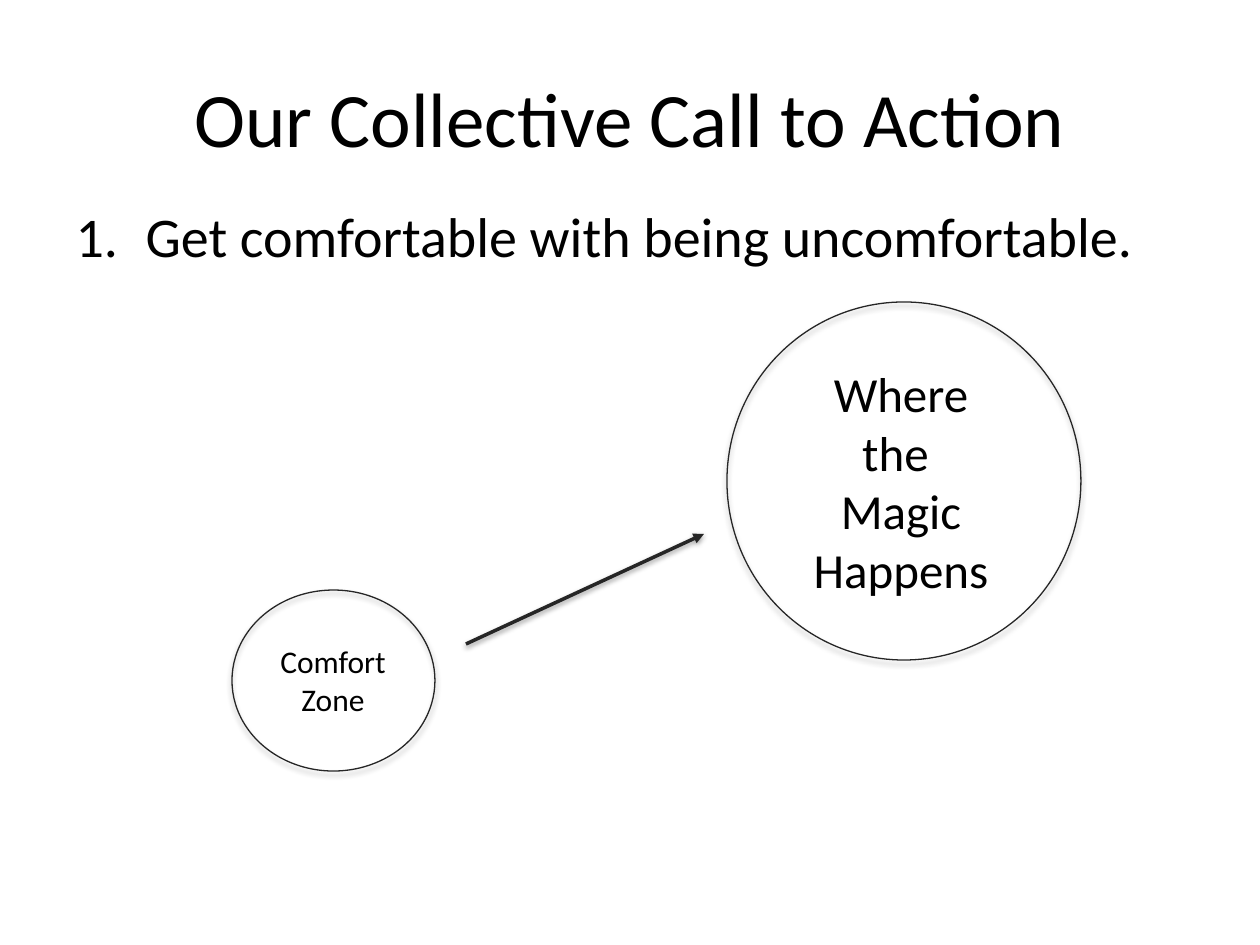
from dataclasses import dataclass

from pptx import Presentation
from pptx import util as u
from pptx.dml.color import RGBColor
from pptx.enum import shapes, text
from pptx.oxml import ns, xmlchemy

EMU_PER_INCH = 914400
PX_PER_INCH = 126


@dataclass(frozen=True)
class Theme:
    """Hold the colours, font and type sizes of the slide."""
    font: str = "Calibri"
    ink: str = "000000"
    outline: str = "262626"
    title: int = 44
    body: int = 32
    large: int = 28
    small: int = 18


THEME = Theme()


def px(length):
    """Turn pixels into EMU."""
    return u.Emu(round(length * EMU_PER_INCH / PX_PER_INCH))


def place(shape, *frame):
    """Move and size a shape by left, top, width and height."""
    shape.left, shape.top, shape.width, shape.height = map(px, frame)


def add_child(parent, tag, **attributes):
    """Append an XML element and return it."""
    child = xmlchemy.OxmlElement(tag)
    for name, value in attributes.items():
        child.set(name, str(value))
    parent.append(child)
    return child


def format_text(paragraphs, size, align):
    """Give paragraphs their font, size, colour and alignment."""
    for para in paragraphs:
        para.alignment = align
        for span in para.runs:
            span.font.name = THEME.font
            span.font.size = u.Pt(size)
            span.font.color.rgb = RGBColor.from_string(THEME.ink)


def add_shadow(shape, alpha, distance):
    """Cast a soft shadow straight down."""
    properties = shape._element.spPr
    for effects in properties.findall(ns.qn("a:effectLst")):
        properties.remove(effects)
    effects = add_child(properties, "a:effectLst")
    shadow = add_child(effects, "a:outerShdw", blurRad=u.Pt(3.1), dist=u.Pt(distance),
                       dir=5400000, rotWithShape=0)
    colour = add_child(shadow, "a:srgbClr", val="000000")
    add_child(colour, "a:alpha", val=alpha * 1000)


def set_line(shape, width):
    """Set the outline colour and width."""
    shape.line.color.rgb = RGBColor.from_string(THEME.outline)
    shape.line.width = u.Pt(width)


def fill_title(page, words):
    """Write the centred title."""
    title = page.shapes.title
    place(title, 63, 38, 1134, 158)
    title.text_frame.text = words
    format_text(title.text_frame.paragraphs, THEME.title, text.PP_ALIGN.CENTER)


def fill_numbered_list(page, items):
    """Write the numbered list in the body placeholder."""
    body = page.placeholders[1]
    place(body, 63, 195, 1134, 394)
    body.text_frame.text = "\n".join(items)
    for para in body.text_frame.paragraphs:
        properties = para._p.get_or_add_pPr()
        properties.set("marL", str(px(70)))
        properties.set("indent", str(px(-70)))
        add_child(properties, "a:buFont", typeface="+mj-lt")
        add_child(properties, "a:buAutoNum", type="arabicPeriod")
    body.text_frame.paragraphs[0].space_before = u.Pt(0)
    format_text(body.text_frame.paragraphs, THEME.body, text.PP_ALIGN.LEFT)


def add_circle(page, *frame):
    """Draw an unfilled, outlined ellipse."""
    circle = page.shapes.add_shape(shapes.MSO_SHAPE.OVAL, *map(px, frame))
    circle.fill.background()
    set_line(circle, 0.75)
    add_shadow(circle, 35, 1.8)


def add_label(page, words, size, wrap, *frame):
    """Add a centred text box."""
    box = page.shapes.add_textbox(*map(px, frame))
    box.text_frame.word_wrap = wrap
    box.text_frame.auto_size = text.MSO_AUTO_SIZE.SHAPE_TO_FIT_TEXT
    box.text_frame.text = words
    format_text(box.text_frame.paragraphs, size, text.PP_ALIGN.CENTER)


def add_arrow(page, *ends):
    """Draw a straight arrow from start to end."""
    arrow = page.shapes.add_connector(shapes.MSO_CONNECTOR.STRAIGHT, *map(px, ends))
    set_line(arrow, 2)
    add_child(arrow.line._get_or_add_ln(), "a:tailEnd", type="triangle")
    add_shadow(arrow, 38, 1.6)


def main():
    """Build the slide and save it."""
    deck = Presentation()
    deck.slide_width, deck.slide_height = px(1260), px(945)
    page = deck.slides.add_slide(deck.slide_layouts[1])
    fill_title(page, "Our Collective Call to Action")
    fill_numbered_list(page, ["Get comfortable with being uncomfortable."])
    add_circle(page, 232, 590, 203, 181)
    add_label(page, "Comfort\nZone", THEME.small, False, 267, 636, 132, 89)
    add_circle(page, 727, 302, 354, 358)
    add_label(page, "Where the \vMagic Happens", THEME.large, True, 795, 357, 212, 251)
    add_arrow(page, 466, 644, 704, 534)
    deck.save("out.pptx")


if __name__ == "__main__":
    main()
